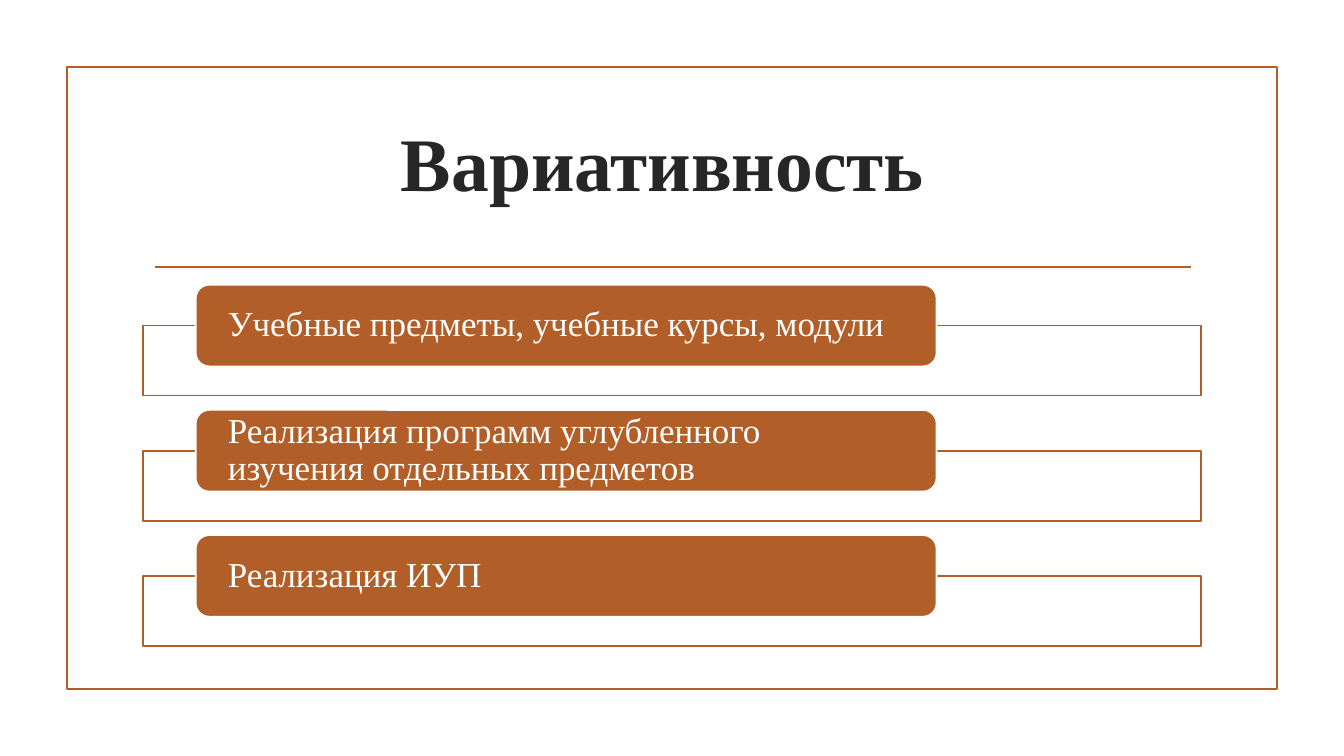
from lxml.etree import SubElement
from pptx import Presentation
from pptx.dml.color import RGBColor
from pptx.enum.shapes import MSO_CONNECTOR, MSO_SHAPE
from pptx.enum.text import MSO_ANCHOR, MSO_AUTO_SIZE, PP_ALIGN
from pptx.oxml.ns import qn
from pptx.util import Inches, Pt

COLUMNS, ROWS = 160, 90
ACCENT, WHITE, DARK = "B15E28", "FFFFFF", "262626"
TOPICS = [
    "Учебные предметы, учебные курсы, модули",
    "Реализация программ углубленного изучения отдельных предметов",
    "Реализация ИУП",
]


def color(value):
    return RGBColor.from_string(value)


class SlideBuilder:
    font_name = "Times New Roman"
    line_width = Pt(1.25)

    def __init__(self, presentation):
        self.column = presentation.slide_width / COLUMNS
        self.row = presentation.slide_height / ROWS
        self.slide = presentation.slides.add_slide(presentation.slide_layouts[5])

    def place(self, left, top, width, height):
        return (round(left * self.column), round(top * self.row),
                round(width * self.column), round(height * self.row))

    def set_text(self, shape, text, size, text_color, alignment, bold=False):
        frame = shape.text_frame
        frame.word_wrap = True
        frame.auto_size = MSO_AUTO_SIZE.NONE
        frame.vertical_anchor = MSO_ANCHOR.MIDDLE
        frame.text = text
        paragraph = frame.paragraphs[0]
        paragraph.alignment = alignment
        paragraph.line_spacing = 0.9
        paragraph.font.name = self.font_name
        paragraph.font.size = Pt(size)
        paragraph.font.bold = bold
        paragraph.font.color.rgb = color(text_color)
        return frame

    def title(self, text, *cells):
        title = self.slide.shapes.title
        title.left, title.top, title.width, title.height = self.place(*cells)
        self.set_text(title, text, 54, DARK, PP_ALIGN.CENTER, bold=True)

    def box(self, kind, cells, line, fill=None, opacity=100):
        shape = self.slide.shapes.add_shape(kind, *self.place(*cells))
        shape.shadow.inherit = False
        shape.line.color.rgb = color(line)
        shape.line.width = self.line_width
        if fill is None:
            shape.fill.background()
            return shape
        shape.fill.solid()
        shape.fill.fore_color.rgb = color(fill)
        if opacity < 100:
            fill_color = shape._element.spPr.find(qn("a:solidFill"))[0]
            SubElement(fill_color, qn("a:alpha"), val=str(opacity * 1000))
        return shape

    def rule(self, left, right, top):
        start, height, end, _ = self.place(left, top, right, 0)
        connector = self.slide.shapes.add_connector(
            MSO_CONNECTOR.STRAIGHT, start, height, end, height)
        connector.line.color.rgb = color(ACCENT)
        connector.line.width = self.line_width
        SubElement(connector._element.spPr, qn("a:effectLst"))

    def topic(self, text, top):
        self.box(MSO_SHAPE.RECTANGLE, (17, top + 4.86, 126, 8.33),
                 ACCENT, WHITE, opacity=90)
        label = self.box(MSO_SHAPE.ROUNDED_RECTANGLE, (23.3, top, 88.2, 9.72),
                         WHITE, ACCENT)
        frame = self.set_text(label, text, 25, WHITE, PP_ALIGN.LEFT)
        frame.margin_left = frame.margin_right = Inches(0.28)
        frame.margin_top = frame.margin_bottom = 0


def main():
    presentation = Presentation()
    presentation.slide_width = Inches(13.33)
    presentation.slide_height = Inches(7.5)
    builder = SlideBuilder(presentation)
    builder.box(MSO_SHAPE.RECTANGLE, (8, 8, 144, 74), ACCENT)
    builder.rule(18.4, 141.8, 31.8)
    builder.title("Вариативность ", 17, 12.85, 126, 14)
    for index, text in enumerate(TOPICS):
        builder.topic(text, 33.9 + 14.9 * index)
    presentation.save("out.pptx")


if __name__ == "__main__":
    main()
